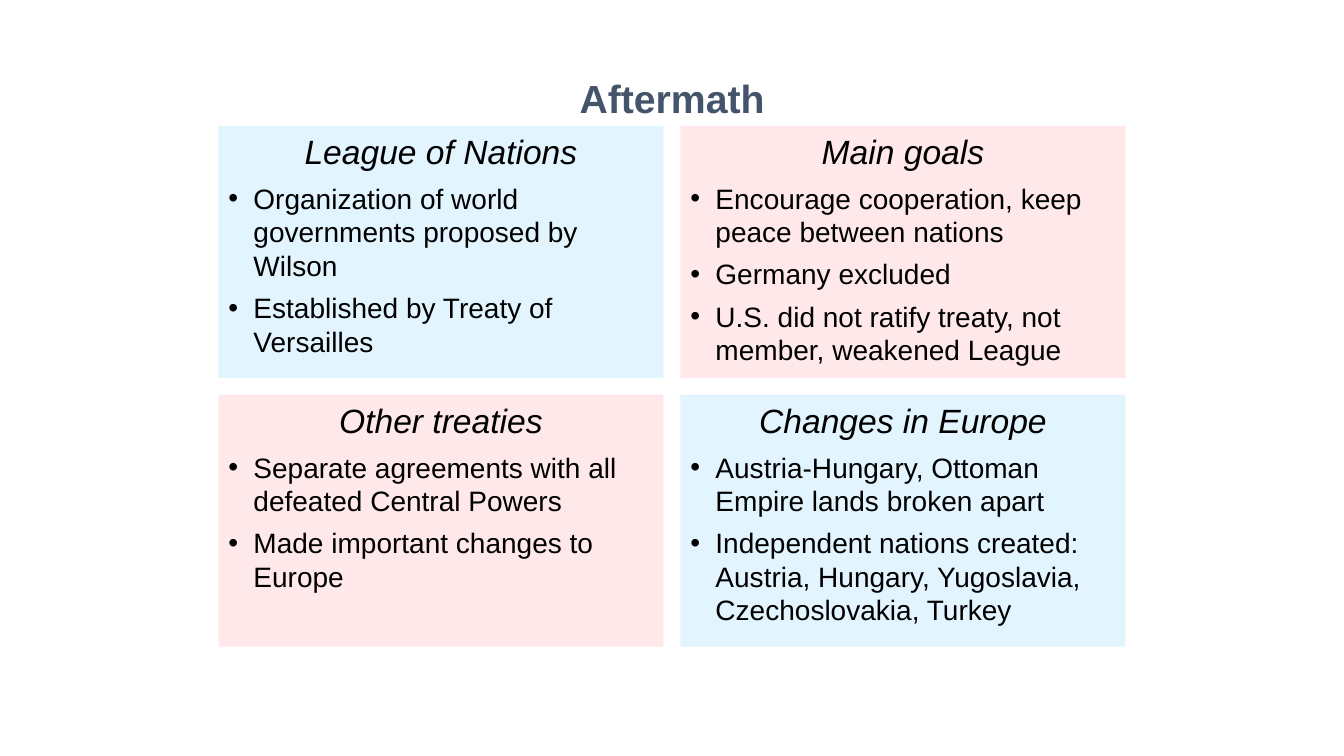
from dataclasses import dataclass

from lxml.etree import SubElement
from pptx import Presentation
from pptx.dml.color import RGBColor as RGB
from pptx.enum.shapes import MSO_SHAPE as Kind
from pptx.enum.text import MSO_ANCHOR as Anchor, PP_ALIGN as Align
from pptx.oxml.ns import qn
from pptx.util import Emu, Pt

SCALE = 9525  # EMU per px
BLUE, PINK = "E2F4FE", "FEE8EA"
LEFT, TOP, WIDE, HIGH, GAP = 208, 120, 424, 240, 16
INDENT = 24

HEAD = {"size": Pt(24), "italic": True}
ITEM = {"size": Pt(20), "italic": False}
TITLE = {"size": Pt(28), "bold": True}


@dataclass
class Panel:
    col: int
    row: int
    head: str
    items: list[str]


PANELS = [
    Panel(0, 0, "League of Nations", [
        "Organization of world governments proposed by Wilson",
        "Established by Treaty of Versailles"]),
    Panel(0, 1, "Other treaties", [
        "Separate agreements with all defeated Central Powers",
        "Made important changes to Europe"]),
    Panel(1, 0, "Main goals", [
        "Encourage cooperation, keep peace between nations",
        "Germany excluded",
        "U.S. did not ratify treaty, not member, weakened League"]),
    Panel(1, 1, "Changes in Europe", [
        "Austria-Hungary, Ottoman Empire lands broken apart",
        "Independent nations created: Austria, Hungary, Yugoslavia, "
        "Czechoslovakia, Turkey"]),
]


def px(num: int) -> Emu:
    return Emu(num * SCALE)


def paint(code: str) -> RGB:
    return RGB.from_string(code)


def write(para, text: str, look: dict, tint: str, align: Align) -> None:
    para.alignment = align
    run = para.add_run()
    run.text = text
    run.font.name = "Arial"
    run.font.color.rgb = paint(tint)
    for key, val in look.items():
        setattr(run.font, key, val)


def dot(para) -> None:
    """Give the paragraph a hanging bullet."""
    props = para._p.get_or_add_pPr()
    props.set("marL", str(px(INDENT)))
    props.set("indent", str(-px(INDENT)))
    SubElement(props, qn("a:buFont")).set("typeface", "Arial")
    SubElement(props, qn("a:buChar")).set("char", "•")


def draw(slide, panel: Panel) -> None:
    left = LEFT + panel.col * (WIDE + GAP)
    top = TOP + panel.row * (HIGH + GAP)
    box = slide.shapes.add_shape(
        Kind.RECTANGLE, px(left), px(top), px(WIDE), px(HIGH))
    box.shadow.inherit = False
    box.fill.solid()
    box.fill.fore_color.rgb = paint(BLUE if panel.col == panel.row else PINK)
    box.line.fill.background()
    frame = box.text_frame
    frame.word_wrap = True
    frame.vertical_anchor = Anchor.TOP
    # Heading
    para = frame.paragraphs[0]
    write(para, panel.head, HEAD, "000000", Align.CENTER)
    para.space_after = Pt(7.2)
    # Bullets
    for item in panel.items:
        para = frame.add_paragraph()
        write(para, item, ITEM, "000000", Align.LEFT)
        para.space_after = Pt(6)
        dot(para)


def main() -> None:
    deck = Presentation()
    deck.slide_width, deck.slide_height = px(1280), px(720)
    slide = deck.slides.add_slide(deck.slide_layouts[6])
    # Four panels
    for panel in PANELS:
        draw(slide, panel)
    # Title
    box = slide.shapes.add_textbox(px(224), px(64), px(832), px(56))
    frame = box.text_frame
    frame.word_wrap = True
    frame.vertical_anchor = Anchor.BOTTOM
    write(frame.paragraphs[0], "Aftermath", TITLE, "44546A", Align.CENTER)
    deck.save("out.pptx")


if __name__ == "__main__":
    main()
